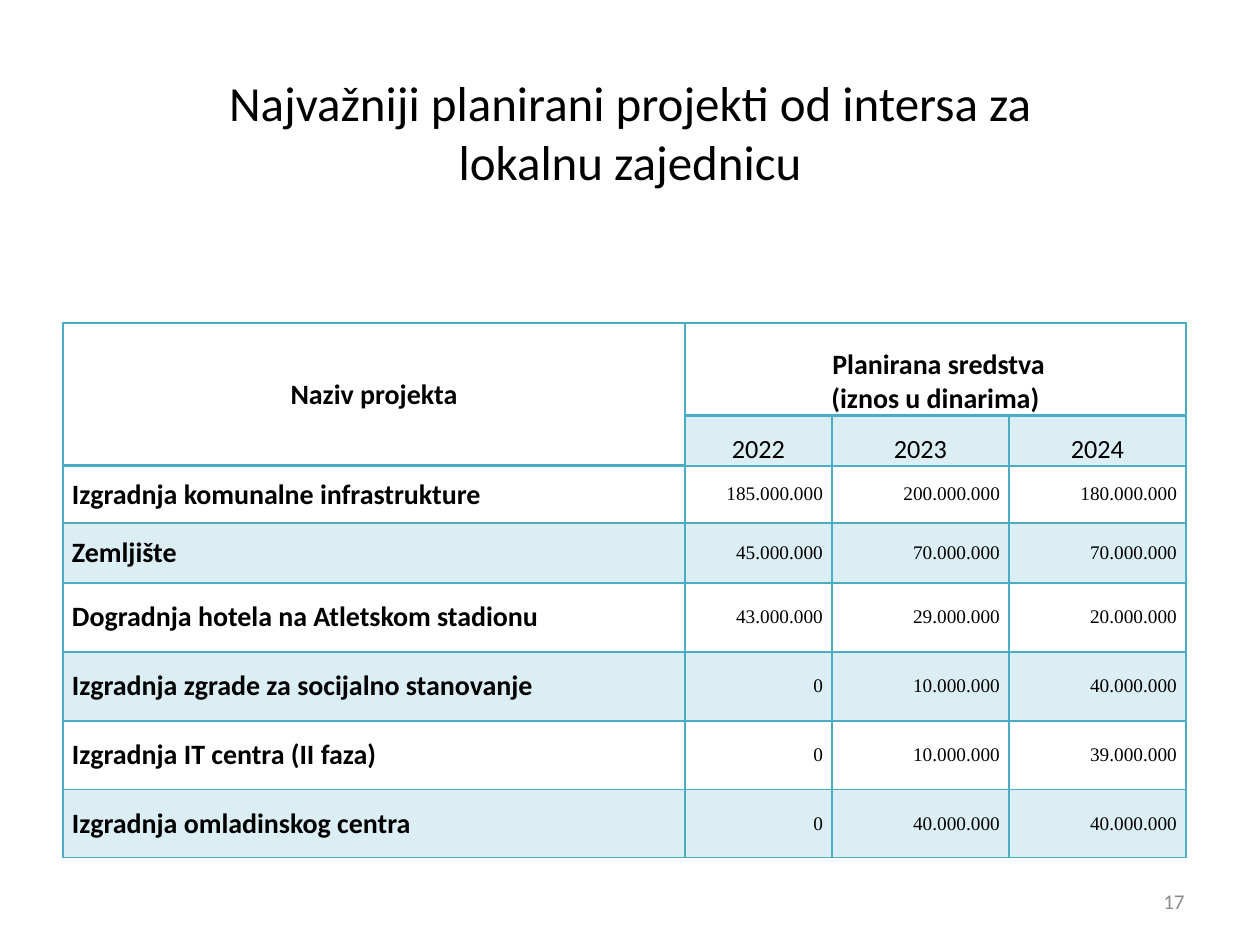
from copy import deepcopy
from dataclasses import dataclass

from lxml import etree
from pptx import Presentation
from pptx.dml.color import RGBColor
from pptx.enum.text import MSO_ANCHOR, PP_ALIGN
from pptx.oxml.ns import qn
from pptx.util import Pt

LEFT, CENTER, RIGHT = PP_ALIGN.LEFT, PP_ALIGN.CENTER, PP_ALIGN.RIGHT
MIDDLE, BOTTOM = MSO_ANCHOR.MIDDLE, MSO_ANCHOR.BOTTOM
EMU_PER_PX = 914400 / 126
TITLE_ONLY = 5


@dataclass(frozen=True)
class Theme:
    font: str = "Calibri"
    number_font: str = "Times New Roman"
    text: str = "000000"
    muted: str = "8C8C8C"
    accent: str = "4BACC6"
    band_alpha: int = 20
    title: int = 28
    label: int = 16
    year: int = 15
    page: int = 12
    number: int = 11


THEME = Theme()

YEARS = ["2022", "2023", "2024"]
PROJECTS = [
    ("Izgradnja komunalne infrastrukture", "185.000.000", "200.000.000", "180.000.000"),
    ("Zemljište", "45.000.000", "70.000.000", "70.000.000"),
    ("Dogradnja hotela na Atletskom stadionu", "43.000.000", "29.000.000", "20.000.000"),
    ("Izgradnja zgrade za socijalno stanovanje", "0", "10.000.000", "40.000.000"),
    ("Izgradnja IT centra (II faza)", "0", "10.000.000", "39.000.000"),
    ("Izgradnja omladinskog centra", "0", "40.000.000", "40.000.000"),
]
COLUMNS = [622, 147, 177, 177]
ROWS = [93, 50, 57, 60, 69, 69, 69, 68]


def px(n):
    return round(n * EMU_PER_PX)


def write(tf, text, size, font=THEME.font, color=THEME.text, bold=False, align=LEFT):
    """Fill a text frame: \\n starts a paragraph, \\v breaks a line."""
    for i, line in enumerate(text.split("\n")):
        p = tf.add_paragraph() if i else tf.paragraphs[0]
        p.text = line
        p.alignment = align
        for r in p.runs:
            r.font.size = Pt(size)
            r.font.name = font
            r.font.bold = bold
            r.font.color.rgb = RGBColor.from_string(color)
        # Line breaks take the size of the text around them
        for br in p._p.findall(qn("a:br")):
            br.append(deepcopy(p.runs[0]._r.rPr))


def set_borders(cell, top, bottom):
    tc_pr = cell._tc.get_or_add_tcPr()
    for i, (side, width) in enumerate(zip("LRTB", (1, 1, top, bottom))):
        ln = etree.Element(qn(f"a:ln{side}"), w=str(Pt(width)))
        fill = etree.SubElement(ln, qn("a:solidFill"))
        etree.SubElement(fill, qn("a:srgbClr"), val=THEME.accent)
        tc_pr.insert(i, ln)


def set_fill(cell, banded):
    if not banded:
        cell.fill.background()
        return
    cell.fill.solid()
    cell.fill.fore_color.rgb = RGBColor.from_string(THEME.accent)
    color = cell._tc.tcPr.find(f".//{qn('a:srgbClr')}")
    etree.SubElement(color, qn("a:alpha"), val=str(THEME.band_alpha * 1000))


def add_title(s, x, y, w, h):
    sp = s.shapes.title
    sp.left, sp.top, sp.width, sp.height = map(px, (x, y, w, h))
    sp.text_frame.vertical_anchor = MIDDLE
    write(sp.text_frame, "Najvažniji planirani projekti od intersa za\vlokalnu zajednicu",
          THEME.title, align=CENTER)


def add_project_table(s, x, y):
    table = s.shapes.add_table(len(ROWS), len(COLUMNS), px(x), px(y),
                               px(sum(COLUMNS)), px(sum(ROWS))).table
    table.first_row = table.horz_banding = False
    for column, w in zip(table.columns, COLUMNS):
        column.width = px(w)
    for row, h in zip(table.rows, ROWS):
        row.height = px(h)

    # Cell frames: odd rows are banded, header cells end in a thick line
    for i in range(len(ROWS)):
        for j in range(len(COLUMNS)):
            cell = table.cell(i, j)
            cell.margin_left = cell.margin_right = px(9)
            cell.margin_top = cell.margin_bottom = 0
            cell.vertical_anchor = MIDDLE if j == 0 or i > 1 else BOTTOM
            set_fill(cell, i % 2 == 1 and (i, j) != (1, 0))
            header_end = 1 if j == 0 else 0
            set_borders(cell, top=2 if i == header_end + 1 else 1,
                        bottom=2 if i == header_end else 1)
    table.cell(0, 0).merge(table.cell(1, 0))
    table.cell(0, 1).merge(table.cell(0, 3))
    # The merged header cell draws its bottom edge from its first cell
    table.cell(0, 0)._tc.tcPr.find(qn("a:lnB")).set("w", str(Pt(2)))

    # Header
    for j, text in enumerate(["Naziv projekta", " Planirana sredstva\n(iznos u dinarima)"]):
        write(table.cell(0, j).text_frame, text, THEME.label, bold=True, align=CENTER)
    for j, year in enumerate(YEARS, 1):
        write(table.cell(1, j).text_frame, year, THEME.year, align=CENTER)

    # Projects
    for i, (name, *amounts) in enumerate(PROJECTS, 2):
        write(table.cell(i, 0).text_frame, name, THEME.label, bold=True)
        for j, amount in enumerate(amounts, 1):
            write(table.cell(i, j).text_frame, amount, THEME.number,
                  font=THEME.number_font, align=RIGHT)


def add_page_number(s, x, y, w, h):
    tf = s.shapes.add_textbox(*map(px, (x, y, w, h))).text_frame
    tf.word_wrap = True
    tf.vertical_anchor = MIDDLE
    write(tf, "17", THEME.page, color=THEME.muted, align=RIGHT)


def main():
    prs = Presentation()
    prs.slide_width, prs.slide_height = px(1260), px(945)
    s = prs.slides.add_slide(prs.slide_layouts[TITLE_ONLY])
    add_title(s, 63, 38, 1134, 186)
    add_project_table(s, 63, 323)
    add_page_number(s, 903, 876, 294, 50)
    prs.save("out.pptx")


if __name__ == "__main__":
    main()
